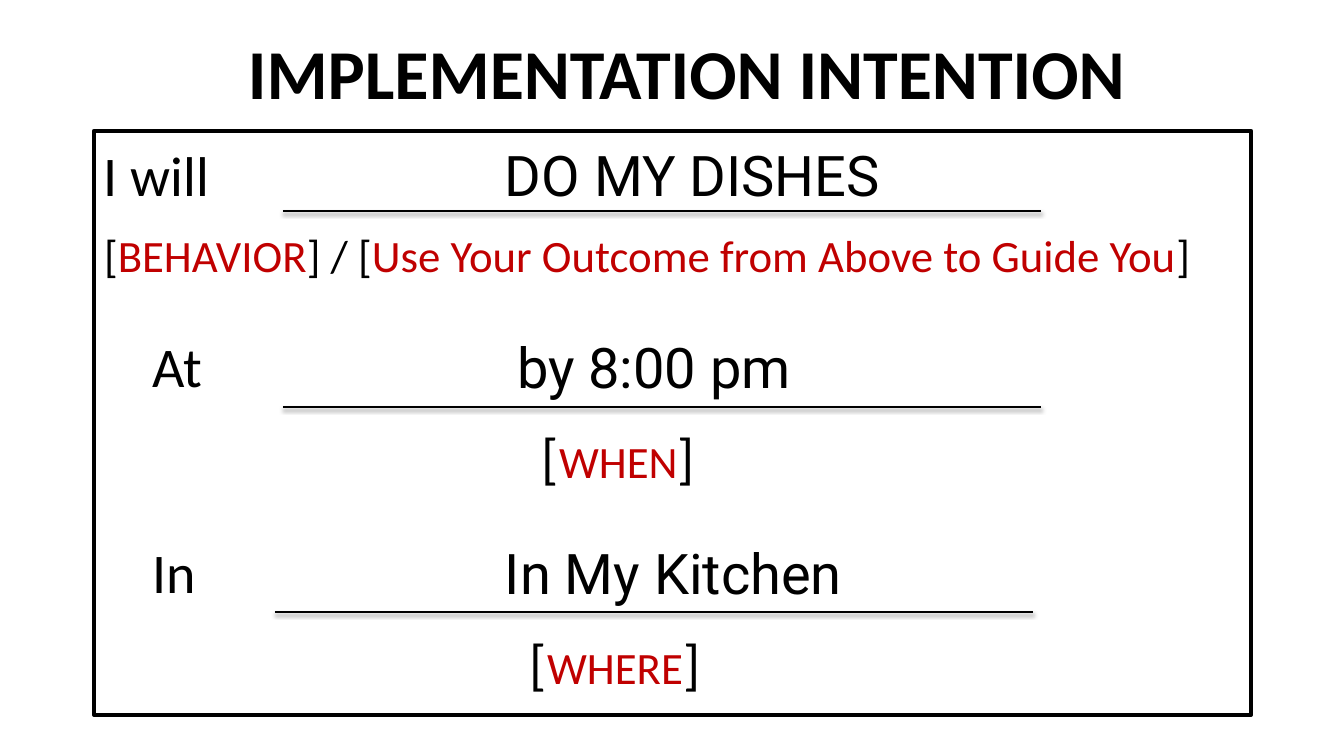
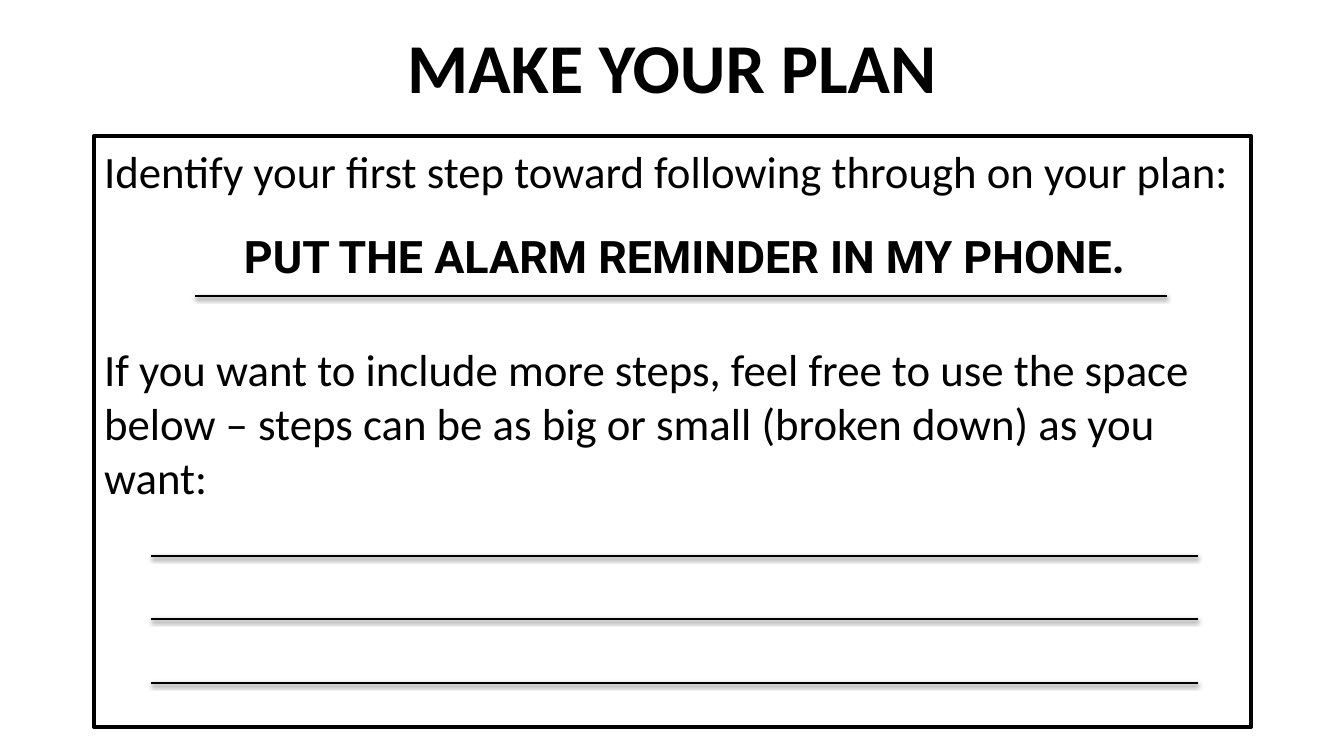
from lxml.etree import SubElement
from pptx import Presentation
from pptx.dml.color import RGBColor
from pptx.enum.shapes import MSO_CONNECTOR as Connector, MSO_SHAPE as Shape
from pptx.enum.text import MSO_ANCHOR as Anchor, PP_ALIGN as Align
from pptx.oxml.ns import qn
from pptx.util import Emu, Pt

SLIDE_WIDTH, SLIDE_HEIGHT = 1344, 756
EMU_PER_PX = 12192000 / SLIDE_WIDTH
BLACK, RED = "000000", "C00000"
BODY_FONT, ANSWER_FONT = "Calibri", "Roboto"
FRAME_LEFT, FRAME_WIDTH = 94, 1157
TEXT_INSET = 10


def px(length):
    return Emu(round(length * EMU_PER_PX))


def color(value):
    return RGBColor.from_string(value)


def add_text(page, text, left, top, width, height, size=32, font=BODY_FONT,
             bold=False, align=Align.LEFT):
    box = page.shapes.add_textbox(px(left), px(top), px(width), px(height))
    frame = box.text_frame
    frame.word_wrap = True
    frame.vertical_anchor = Anchor.TOP
    frame.margin_left = frame.margin_right = 0
    frame.margin_top = frame.margin_bottom = 0
    para = frame.paragraphs[0]
    para.alignment = align
    spans = [(text, BLACK, size)] if isinstance(text, str) else text
    for words, ink, points in spans:
        span = para.add_run()
        span.text = words
        span.font.name = font
        span.font.size = Pt(points)
        span.font.bold = bold
        span.font.color.rgb = color(ink)


def add_title(page, text, center, top):
    width = 1000
    add_text(page, text, center - width // 2, top, width, 86,
             size=50, bold=True, align=Align.CENTER)


def add_frame(page, top, height):
    frame = page.shapes.add_shape(Shape.RECTANGLE, px(FRAME_LEFT), px(top),
                                  px(FRAME_WIDTH), px(height))
    frame.shadow.inherit = False
    frame.fill.background()
    frame.line.color.rgb = color(BLACK)
    frame.line.width = Pt(3)


def add_rule(page, left, y, width):
    rule = page.shapes.add_connector(Connector.STRAIGHT, px(left), px(y),
                                     px(left + width), px(y))
    rule.line.color.rgb = color(BLACK)
    rule.line.width = Pt(2)
    effects = SubElement(rule.element.spPr, qn("a:effectLst"))
    shadow = SubElement(effects, qn("a:outerShdw"), blurRad=str(Pt(3.1)),
                        dist=str(Pt(1.6)), dir="5400000", rotWithShape="0")
    ink = SubElement(shadow, qn("a:srgbClr"), val=BLACK)
    SubElement(ink, qn("a:alpha"), val="38000")


def bracketed(word, bracket_size):
    return [("[", BLACK, bracket_size), (word, RED, 32),
            ("]", BLACK, bracket_size)]


def add_prompt(page, top, label, label_left, answer, answer_left,
               rule_left, rule_drop, hint, hint_left, hint_drop):
    add_text(page, label, label_left, top, 150, 68, size=40)
    add_text(page, answer, answer_left, top + 1, 500, 66, size=40,
             font=ANSWER_FONT)
    add_rule(page, rule_left, top + rule_drop, 758)
    add_text(page, hint, hint_left, top + hint_drop,
             FRAME_LEFT + FRAME_WIDTH - hint_left, 68)


def build_intention(page):
    add_title(page, "IMPLEMENTATION INTENTION", 687, 29)
    add_frame(page, 131, 584)
    text_left = FRAME_LEFT + TEXT_INSET
    behavior = bracketed("BEHAVIOR", 32)
    guide = bracketed("Use Your Outcome from Above to Guide You", 32)
    add_prompt(page, 140, "I will", text_left, "DO MY DISHES", 505, 283, 71,
               behavior + [(" / ", BLACK, 32)] + guide, text_left, 88)
    add_prompt(page, 331, "At", 153, "by 8:00 pm", 517, 283, 76,
               bracketed("WHEN", 40), 542, 91)
    add_prompt(page, 537, "In", 153, "In My Kitchen", 505, 275, 75,
               bracketed("WHERE", 40), 530, 91)


def build_plan(page):
    add_title(page, "MAKE YOUR PLAN", 672, 23)
    add_frame(page, 136, 591)
    left = FRAME_LEFT + TEXT_INSET
    width = FRAME_WIDTH - 2 * TEXT_INSET
    add_text(page, "Identify your first step toward following through on your plan:",
             left, 144, width, 55)
    add_text(page, "PUT THE ALARM REMINDER IN MY PHONE.", 195, 229, 980, 53,
             font=ANSWER_FONT, bold=True, align=Align.CENTER)
    add_rule(page, 195, 296, 972)
    add_text(page, "If you want to include more steps, feel free to use the space "
             "below – steps can be as big or small (broken down) as you want:",
             left, 342, width, 164)
    for y in (556, 619, 683):
        add_rule(page, 151, y, 1047)


def main():
    deck = Presentation()
    deck.slide_width, deck.slide_height = px(SLIDE_WIDTH), px(SLIDE_HEIGHT)
    for build in (build_intention, build_plan):
        build(deck.slides.add_slide(deck.slide_layouts[6]))
    deck.save("out.pptx")


if __name__ == "__main__":
    main()
